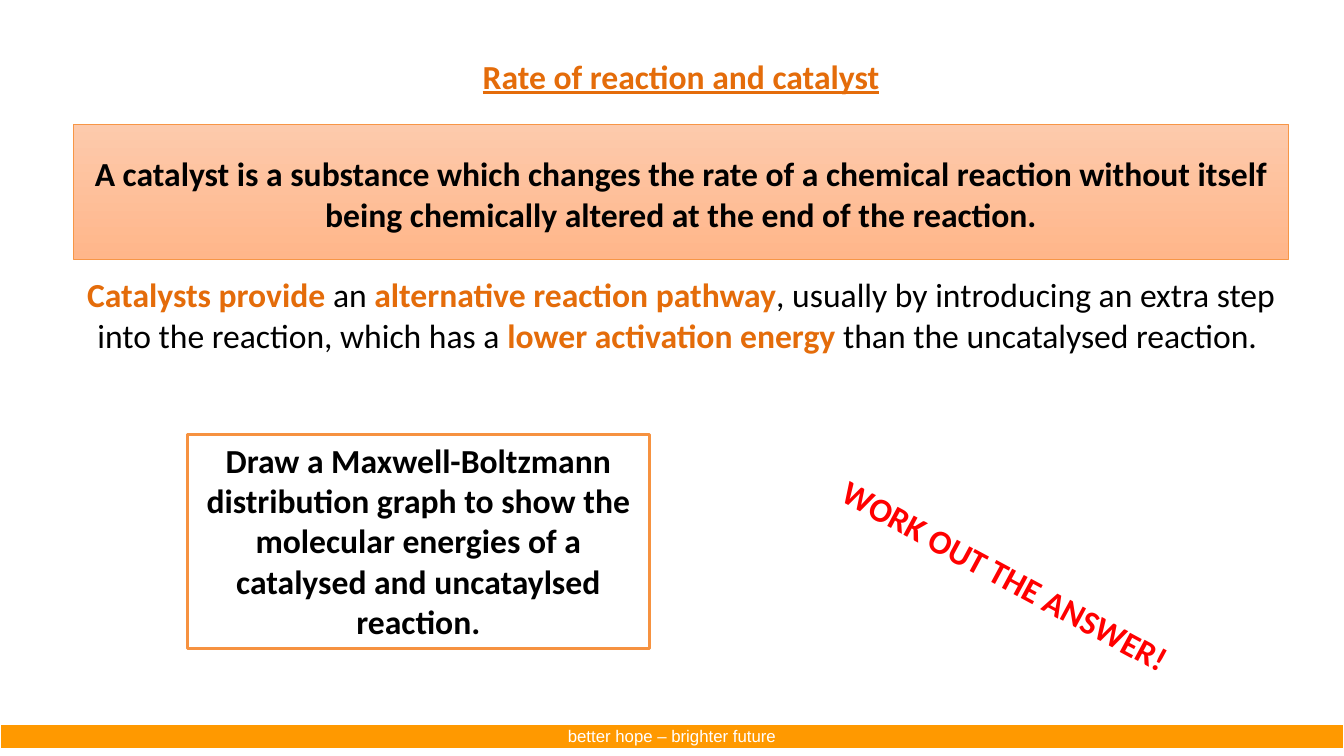
from dataclasses import dataclass

from pptx import Presentation
from pptx.dml.color import RGBColor
from pptx.enum.shapes import MSO_SHAPE
from pptx.enum.text import MSO_ANCHOR, PP_ALIGN
from pptx.util import Inches, Pt


@dataclass(frozen=True)
class Theme:
    white: str = "FFFFFF"
    black: str = "000000"
    accent: str = "E46C0A"
    alert: str = "FF0000"
    footer: str = "FF9900"
    banner_top: str = "FDCAAC"
    banner_bottom: str = "FFB68A"
    banner_line: str = "F79646"
    task_line: str = "F69240"
    font: str = "Calibri"
    footer_font: str = "Arial"
    size: int = 24
    footer_size: int = 12
    paragraph_gap: int = 29


THEME = Theme()
WIDTH, HEIGHT = Inches(13.33), Inches(7.5)


def color(value):
    return RGBColor.from_string(value)


def area(left, top, width, height):
    """Turn percentages of the slide into lengths."""
    shares = zip((left, top, width, height), (WIDTH, HEIGHT, WIDTH, HEIGHT))
    return [round(share * side / 100) for share, side in shares]


def add_panel(slide, place, line, weight, fill=None):
    shape = slide.shapes.add_shape(MSO_SHAPE.RECTANGLE, *area(*place))
    shape.shadow.inherit = False
    shape.line.color.rgb = color(line)
    shape.line.width = Pt(weight)
    if fill:
        shape.fill.solid()
        shape.fill.fore_color.rgb = color(fill)
    else:
        shape.fill.background()
    return shape


def add_text_box(slide, place):
    return slide.shapes.add_textbox(*area(*place))


def style_run(run, ink, bold=True, font=THEME.font, size=THEME.size):
    run.font.name = font
    run.font.size = Pt(size)
    run.font.bold = bold
    run.font.color.rgb = color(ink)


def write(shape, text, ink, anchor=MSO_ANCHOR.TOP, **style):
    frame = shape.text_frame
    frame.word_wrap = True
    frame.vertical_anchor = anchor
    frame.text = text
    paragraph = frame.paragraphs[0]
    paragraph.alignment = PP_ALIGN.CENTER
    style_run(paragraph.runs[0], ink, **style)
    return paragraph


def add_highlighted_paragraph(shape, pieces):
    paragraph = shape.text_frame.add_paragraph()
    paragraph.alignment = PP_ALIGN.CENTER
    paragraph.space_before = Pt(THEME.paragraph_gap)
    for text, highlighted in pieces:
        run = paragraph.add_run()
        run.text = text
        style_run(run, THEME.accent if highlighted else THEME.black, highlighted)


def add_footer(slide):
    footer = add_panel(slide, (0, 95.73, 100, 3.33), THEME.white, 1.5, THEME.footer)
    write(footer, "better hope – brighter future", THEME.white, MSO_ANCHOR.MIDDLE,
          bold=False, font=THEME.footer_font, size=THEME.footer_size)


def add_banner(slide):
    banner = add_panel(slide, (5.48, 16.4, 90.4, 17.87), THEME.banner_line, 0.5)
    banner.fill.gradient()
    banner.fill.gradient_angle = 270
    inks = (THEME.banner_top, THEME.banner_bottom)
    for stop, ink in zip(banner.fill.gradient_stops, inks):
        stop.color.rgb = color(ink)


def add_title(slide):
    title = add_text_box(slide, (1.35, 6.67, 98.65, 6.67))
    paragraph = write(title, "Rate of reaction and catalyst", THEME.accent)
    paragraph.runs[0].font.underline = True


def add_definition(slide):
    definition = add_text_box(slide, (5.48, 19.6, 90.4, 28.27))
    write(definition, "A catalyst is a substance which changes the rate of a chemical "
          "reaction without itself being chemically altered at the end of the reaction.",
          THEME.black)
    add_highlighted_paragraph(definition, [
        ("Catalysts provide ", True),
        ("an ", False),
        ("alternative reaction pathway", True),
        (", usually by introducing an extra step into the reaction, which has a ", False),
        ("lower activation energy", True),
        (" than the uncatalysed reaction. ", False),
    ])


def add_task(slide):
    task = add_panel(slide, (13.95, 57.47, 34.36, 28.27), THEME.task_line, 2)
    write(task, "Draw a Maxwell-Boltzmann distribution graph to show the molecular "
          "energies of a catalysed and uncataylsed reaction.", THEME.black)


def add_prompt(slide):
    prompt = add_text_box(slide, (60.39, 72.8, 28.81, 6.67))
    prompt.rotation = 28.4
    write(prompt, "WORK OUT THE ANSWER!", THEME.alert)


def main():
    presentation = Presentation()
    presentation.slide_width, presentation.slide_height = WIDTH, HEIGHT
    slide = presentation.slides.add_slide(presentation.slide_layouts[6])
    for add_part in (add_footer, add_banner, add_title, add_definition, add_task, add_prompt):
        add_part(slide)
    presentation.save("out.pptx")


if __name__ == "__main__":
    main()
